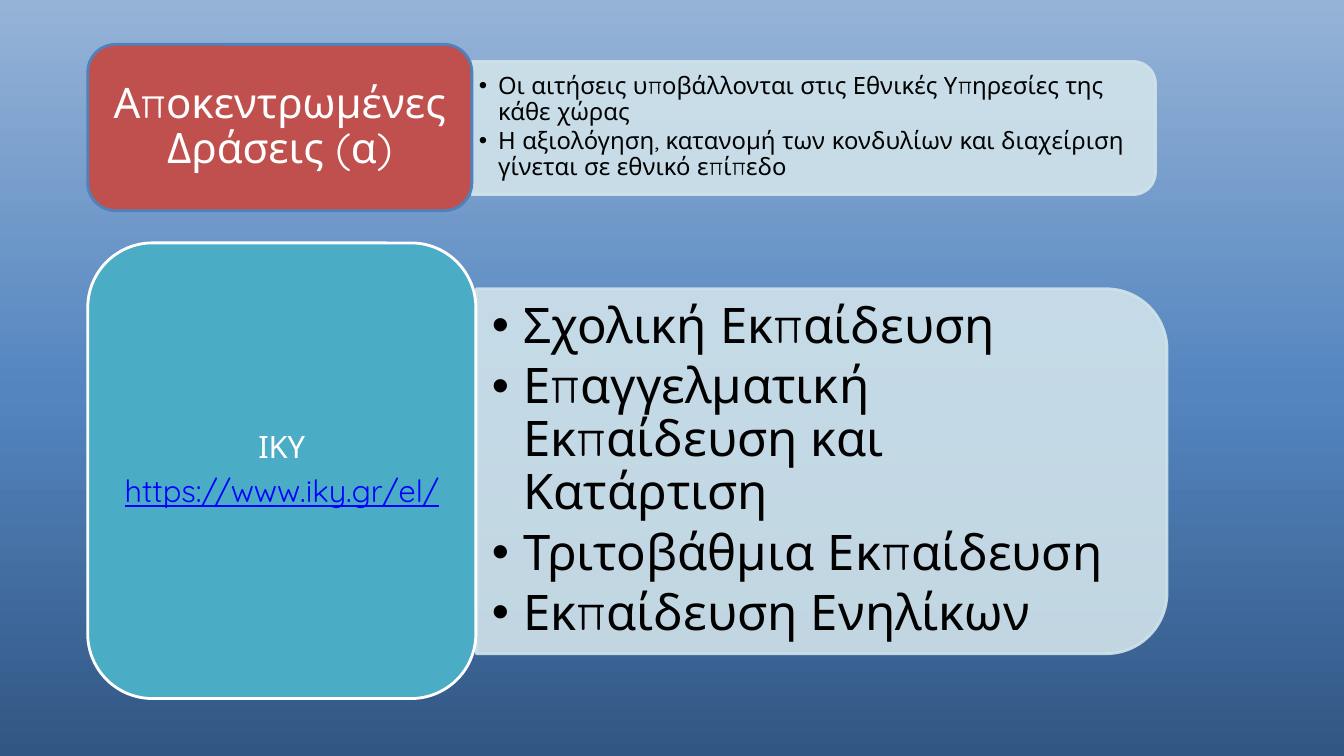
from copy import deepcopy

from pptx import Presentation
from pptx.dml.color import RGBColor
from pptx.enum.shapes import MSO_SHAPE as Shape
from pptx.enum.text import MSO_ANCHOR as Anchor, MSO_AUTO_SIZE as AutoSize, PP_ALIGN as Align
from pptx.oxml.ns import qn
from pptx.oxml.xmlchemy import OxmlElement
from pptx.util import Inches, Pt


def color(hex_string):
    return RGBColor.from_string(hex_string)


class SlideKit:
    """Holds the style and the current slide; boxes are percent shares of the slide."""

    font = "Quicksand"
    white, black, link, pale = "FFFFFF", "000000", "0000FF", "D0E3EA"

    def __init__(self, deck, layout):
        self.deck = deck
        self.page = deck.slides.add_slide(deck.slide_layouts[layout])

    def frame(self, box):
        width, height = self.deck.slide_width, self.deck.slide_height
        return [round(share * side / 100) for share, side in zip(box, (width, height) * 2)]

    def background(self, stops):
        fill = self.page.background.fill
        fill.gradient()
        fill.gradient_angle = 90
        stop_list = self.page.element.find(".//" + qn("a:gsLst"))
        stop_list.append(deepcopy(stop_list[0]))
        for stop, (position, shade) in zip(fill.gradient_stops, stops):
            stop.position = position
            stop.color.rgb = color(shade)

    def shape(self, kind, frame, fill, line):
        shape = self.page.shapes.add_shape(kind, *frame)
        shape.shadow.inherit = False
        shape.fill.solid()
        shape.fill.fore_color.rgb = color(fill)
        shape.line.color.rgb = color(line)
        shape.line.width = Pt(2)
        return shape

    def card(self, box, fill, line):
        return self.shape(Shape.ROUNDED_RECTANGLE, self.frame(box), fill, line)

    def panel(self, box):
        left, top, width, height = self.frame(box)
        shift = (width - height) // 2
        upright = (left + shift, top - shift, height, width)
        shape = self.shape(Shape.ROUND_2_SAME_RECTANGLE, upright, self.pale, self.pale)
        shape.rotation = 90
        for shade in shape.element.spPr.iter(qn("a:srgbClr")):
            alpha = OxmlElement("a:alpha")
            alpha.set("val", "90000")
            shade.append(alpha)

    def set_text(self, shape, lines, size, shade, inset, after, align):
        text = shape.text_frame
        text.text = "\n".join(lines)
        text.word_wrap = True
        text.auto_size = AutoSize.NONE
        text.vertical_anchor = Anchor.MIDDLE
        text.margin_left = text.margin_right = Inches(inset)
        text.margin_top = text.margin_bottom = Inches(inset / 2)
        for para in text.paragraphs:
            para.alignment = align
            para.line_spacing = 0.9
            para.space_before = Pt(0)
            para.space_after = Pt(round(size * after, 2))
            for span in para.runs:
                span.font.name = self.font
                span.font.size = Pt(size)
                span.font.color.rgb = color(shade)
        return text.paragraphs

    def placeholder(self, index, box):
        holder = self.page.placeholders[index]
        holder.left, holder.top, holder.width, holder.height = self.frame(box)
        holder.element.getparent().append(holder.element)
        return holder

    def title(self, box, text, size):
        self.set_text(self.placeholder(0, box), [text], size, self.white, 0.12, 0.35, Align.CENTER)

    def bullets(self, index, box, lines, size, inset, indent):
        holder = self.placeholder(index, box)
        for para in self.set_text(holder, lines, size, self.black, inset, 0.15, Align.LEFT):
            properties = para._p.get_or_add_pPr()
            properties.set("marL", str(Inches(indent)))
            properties.set("indent", str(-Inches(indent)))

    def link_card(self, box, fill, lines, size):
        card = self.card(box, fill, self.white)
        paras = self.set_text(card, lines, size, self.white, 0.09, 0.35, Align.CENTER)
        address = paras[-1].runs[0].font
        address.color.rgb = color(self.link)
        address.underline = True


def main():
    deck = Presentation()
    deck.slide_width, deck.slide_height = Inches(13.33), Inches(7.5)
    kit = SlideKit(deck, layout=3)
    kit.background([(0, "315683"), (0.48, "5485BF"), (1, "95B3D7")])

    kit.panel((35.44, 38.2, 51.39, 48.27))
    kit.bullets(2, (35.48, 40.53, 50.04, 43.6), [
        "Σχολική Εκπαίδευση",
        "Επαγγελματική Εκπαίδευση και Κατάρτιση",
        "Τριτοβάθμια Εκπαίδευση",
        "Εκπαίδευση Ενηλίκων",
    ], size=35, inset=0.15, indent=0.31)
    kit.link_card((6.53, 32.13, 28.88, 60.27), "4BACC6", ["ΙΚΥ", "https://www.iky.gr/el/"], size=22)

    kit.panel((35.11, 8.13, 50.86, 17.6))
    kit.bullets(1, (35.11, 8.93, 50.34, 15.87), [
        "Οι αιτήσεις υποβάλλονται στις Εθνικές Υπηρεσίες της κάθε χώρας",
        "Η αξιολόγηση, κατανομή των κονδυλίων και διαχείριση γίνεται σε εθνικό επίπεδο",
    ], size=17, inset=0.07, indent=0.19)
    kit.card((6.53, 5.87, 28.58, 22), "C0504D", "4F81BD")
    kit.title((7.13, 6.93, 27.38, 19.87), "Αποκεντρωμένες Δράσεις (α)", size=30)

    deck.save("out.pptx")


if __name__ == "__main__":
    main()
